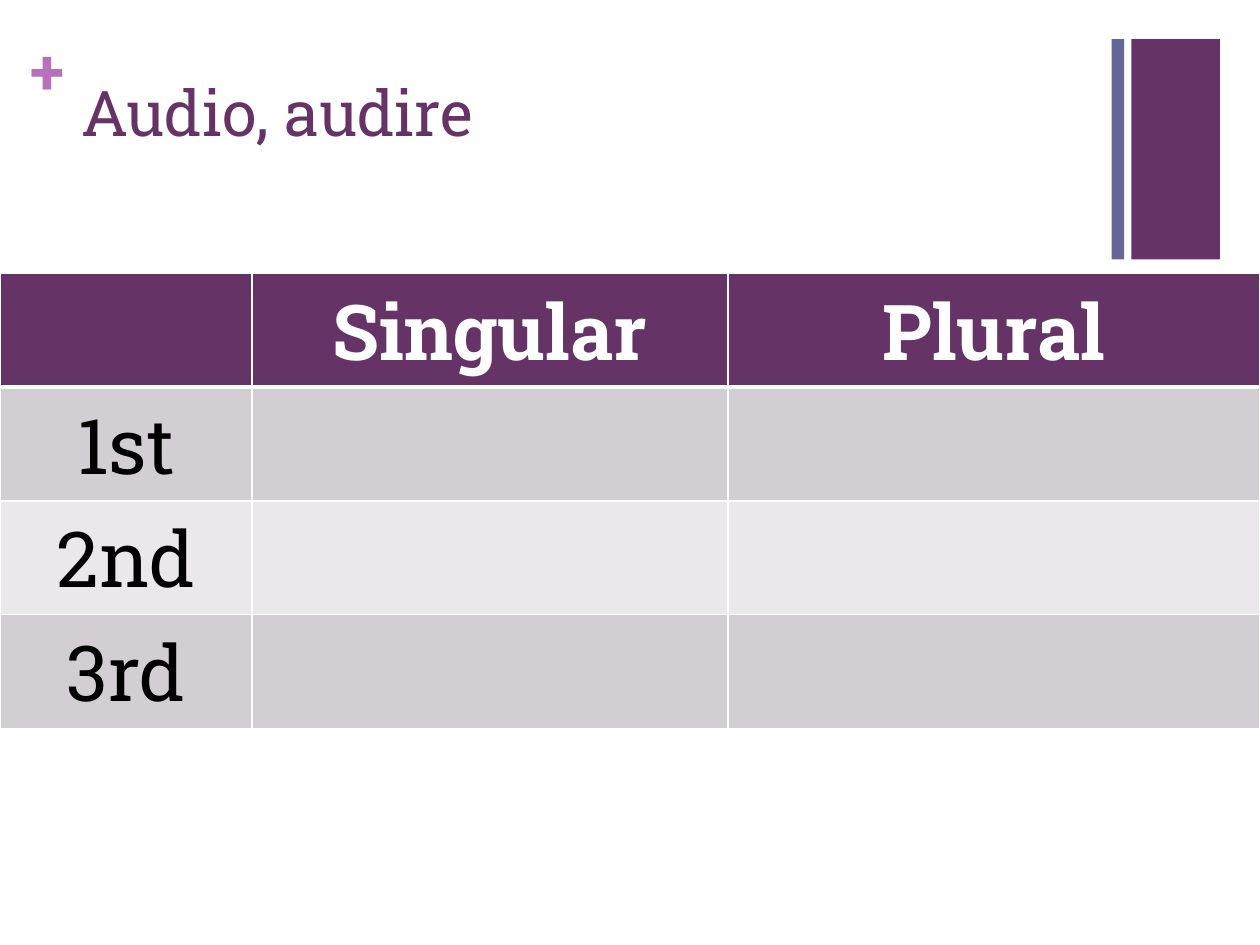
from lxml.etree import SubElement
from pptx import Presentation
from pptx.dml.color import RGBColor
from pptx.enum.shapes import MSO_SHAPE
from pptx.enum.text import PP_ALIGN
from pptx.oxml.ns import qn
from pptx.util import Pt

FONT = "Roboto Slab"
PURPLE, SLATE, ORCHID = "663366", "666699", "B870B8"
WHITE, BLACK = "FFFFFF", "000000"
BANDS = ["D3CED3", "EAE8EA"]
ROWS = [["", "Singular", "Plural"], ["1st", "", ""], ["2nd", "", ""], ["3rd", "", ""]]
COLUMN_WIDTHS = [144, 272, 304]
ROW_HEIGHT = 65


def color(value):
    return RGBColor.from_string(value)


def write(frame, text, size=36, fill=BLACK, bold=False, align=PP_ALIGN.LEFT):
    para = frame.paragraphs[0]
    para.alignment = align
    span = para.add_run()
    span.text = text
    span.font.name = FONT
    span.font.size = Pt(size)
    span.font.bold = bold
    span.font.color.rgb = color(fill)


def add_bar(page, left, width, fill):
    bar = page.shapes.add_shape(MSO_SHAPE.RECTANGLE, Pt(left), Pt(22.3), Pt(width), Pt(126))
    bar.shadow.inherit = False
    bar.fill.solid()
    bar.fill.fore_color.rgb = color(fill)
    bar.line.fill.background()


def add_text(page, text, left, top, width, height, inset=(7.2, 3.6), wrap=True, **style):
    box = page.shapes.add_textbox(Pt(left), Pt(top), Pt(width), Pt(height))
    frame = box.text_frame
    frame.word_wrap = wrap
    frame.margin_left = frame.margin_right = Pt(inset[0])
    frame.margin_top = frame.margin_bottom = Pt(inset[1])
    write(frame, text, **style)


def set_borders(cell, **widths):
    # Border lines must come before the fill in the cell properties
    properties = cell._tc.get_or_add_tcPr()
    for side in ("L", "R", "T", "B"):
        line = SubElement(properties, qn(f"a:ln{side}"), w=str(Pt(widths.get(side, 1))))
        fill = SubElement(line, qn("a:solidFill"))
        SubElement(fill, qn("a:srgbClr"), val=WHITE)


def add_grid(page, left, top):
    frame = page.shapes.add_table(len(ROWS), len(COLUMN_WIDTHS), Pt(left), Pt(top),
                                  Pt(sum(COLUMN_WIDTHS)), Pt(ROW_HEIGHT * len(ROWS)))
    table = frame.table
    for column, width in zip(table.columns, COLUMN_WIDTHS):
        column.width = Pt(width)
    for r, labels in enumerate(ROWS):
        table.rows[r].height = Pt(ROW_HEIGHT)
        header = r == 0
        # A thick rule separates the header from the body
        rule = {"B": 3} if header else {"T": 3} if r == 1 else {}
        for c, label in enumerate(labels):
            cell = table.cell(r, c)
            set_borders(cell, **rule)
            cell.fill.solid()
            cell.fill.fore_color.rgb = color(PURPLE if header else BANDS[(r - 1) % 2])
            if label:
                write(cell.text_frame, label, size=44, bold=header,
                      fill=WHITE if header else BLACK, align=PP_ALIGN.CENTER)


def main():
    deck = Presentation()
    deck.slide_width, deck.slide_height = Pt(720), Pt(540)
    page = deck.slides.add_slide(deck.slide_layouts[6])

    # Corner decoration
    add_bar(page, 646.5, 50.6, PURPLE)
    add_text(page, "+", 17.3, 18, 21, 44, inset=(0, 0), wrap=False, fill=ORCHID, bold=True)
    add_bar(page, 635.2, 7.2, SLATE)

    # Title and conjugation table
    add_text(page, "Audio, audire", 39.6, 38.2, 594.7, 87.8, fill=PURPLE)
    add_grid(page, 0, 156.2)

    deck.save("out.pptx")


if __name__ == "__main__":
    main()
